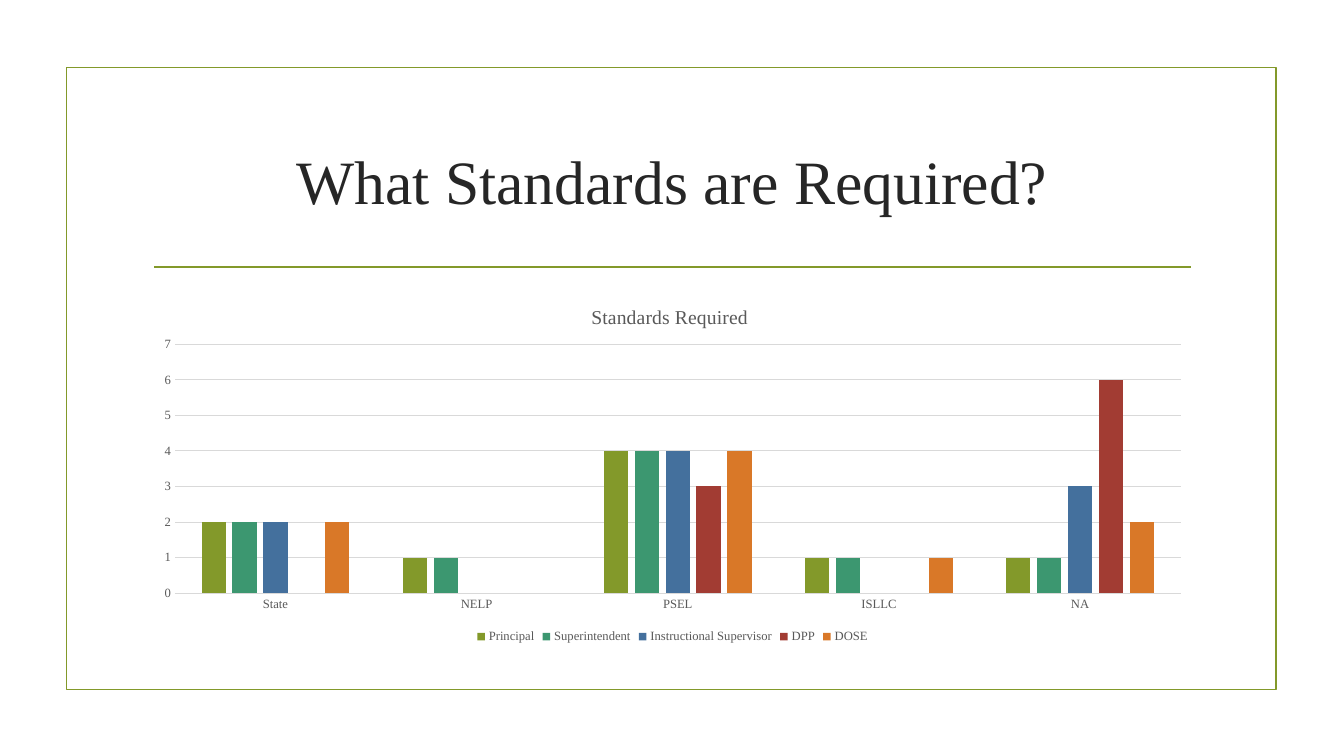
import pptx
import pptx.chart.data
import pptx.dml.color
import pptx.enum.chart
import pptx.enum.shapes
import pptx.enum.text
import pptx.oxml
import pptx.util
from pptx.util import Inches

RGBColor = pptx.dml.color.RGBColor
GREEN = RGBColor(0x83, 0x99, 0x2A)
TEAL = RGBColor(0x3C, 0x97, 0x70)
BLUE = RGBColor(0x44, 0x70, 0x9D)
RED = RGBColor(0xA2, 0x3C, 0x33)
ORANGE = RGBColor(0xD9, 0x78, 0x28)
WHITE = RGBColor(0xFF, 0xFF, 0xFF)
TITLE_INK = RGBColor(0x26, 0x26, 0x26)
CHART_INK = RGBColor(0x59, 0x59, 0x59)
GRID = RGBColor(0xD9, 0xD9, 0xD9)
FONT = "Times New Roman"

STANDARDS = ["State", "NELP", "PSEL", "ISLLC", "NA"]
ROLES = [
    ("Principal", GREEN, (2, 1, 4, 1, 1)),
    ("Superintendent", TEAL, (2, 1, 4, 1, 1)),
    ("Instructional Supervisor", BLUE, (2, None, 4, None, 3)),
    ("DPP", RED, (None, None, 3, None, 6)),
    ("DOSE", ORANGE, (2, None, 4, 1, 2)),
]


def format_font(font, size, color):
    font.name = FONT
    font.size = pptx.util.Pt(size)
    font.bold = False
    font.color.rgb = color


def format_line(line, color, width):
    line.color.rgb = color
    line.width = pptx.util.Pt(width)


def write_text(text_frame, text, size, color, align=pptx.enum.text.PP_ALIGN.CENTER):
    paragraph = text_frame.paragraphs[0]
    paragraph.alignment = align
    run = paragraph.add_run()
    run.text = text
    format_font(run.font, size, color)


def add_frame(slide, left, top, width, height):
    """Outline the page and rule off the heading, both in green."""
    frame = slide.shapes.add_shape(
        pptx.enum.shapes.MSO_SHAPE.RECTANGLE,
        Inches(left), Inches(top), Inches(width), Inches(height))
    frame.shadow.inherit = False
    frame.fill.background()
    format_line(frame.line, GREEN, 1.25)

    inset, drop = 0.87, 1.98
    rule = slide.shapes.add_connector(
        pptx.enum.shapes.MSO_CONNECTOR.STRAIGHT,
        Inches(left + inset), Inches(top + drop),
        Inches(left + width - inset + 0.02), Inches(top + drop))
    format_line(rule.line, GREEN, 1.25)
    rule._element.spPr.append(pptx.oxml.parse_xml(
        '<a:effectLst xmlns:a="http://schemas.openxmlformats.org/drawingml/2006/main"/>'))


def add_heading(slide, left, top, width, height):
    box = slide.shapes.add_textbox(
        Inches(left), Inches(top), Inches(width), Inches(height))
    box.text_frame.word_wrap = True
    box.text_frame.vertical_anchor = pptx.enum.text.MSO_ANCHOR.MIDDLE
    write_text(box.text_frame, "What Standards are Required?", 44, TITLE_INK)


def place_in_chart(element, target, **fractions):
    """Give the title or plot area a fixed place, in fractions of the chart."""
    layout = element.find(pptx.oxml.ns.qn("c:layout"))
    if layout is not None:
        element.remove(layout)
    inner = '<c:layoutTarget val="inner"/>' if target == "plot" else ""
    modes = '<c:xMode val="edge"/><c:yMode val="edge"/>'
    values = "".join(f'<c:{key} val="{value}"/>' for key, value in fractions.items())
    layout = pptx.oxml.parse_xml(
        '<c:layout xmlns:c="http://schemas.openxmlformats.org/drawingml/2006/chart">'
        f"<c:manualLayout>{inner}{modes}{values}</c:manualLayout></c:layout>")
    element.insert(1 if target == "title" else 0, layout)


def add_standards_chart(slide, left, top, width, height):
    data = pptx.chart.data.CategoryChartData()
    data.categories = STANDARDS
    for role, _, counts in ROLES:
        data.add_series(role, counts)
    chart = slide.shapes.add_chart(
        pptx.enum.chart.XL_CHART_TYPE.COLUMN_CLUSTERED,
        Inches(left), Inches(top), Inches(width), Inches(height), data).chart
    format_font(chart.font, 9, CHART_INK)

    chart.has_title = True
    write_text(chart.chart_title.text_frame, "Standards Required", 14, CHART_INK)
    chart.chart_title.include_in_layout = False
    place_in_chart(chart.chart_title._element, "title", x=0.42, y=0.05)

    chart.has_legend = True
    chart.legend.position = pptx.enum.chart.XL_LEGEND_POSITION.BOTTOM
    chart.legend.include_in_layout = False
    format_font(chart.legend.font, 9, CHART_INK)

    plot = chart.plots[0]
    plot.gap_width = 219
    plot.overlap = -27
    plot.vary_by_categories = False
    for series, (_, color, _) in zip(plot.series, ROLES):
        series.format.fill.solid()
        series.format.fill.fore_color.rgb = color
        series.invert_if_negative = False

    for axis in (chart.category_axis, chart.value_axis):
        axis.major_tick_mark = pptx.enum.chart.XL_TICK_MARK.NONE
        axis.minor_tick_mark = pptx.enum.chart.XL_TICK_MARK.NONE
        format_font(axis.tick_labels.font, 9, CHART_INK)
    format_line(chart.category_axis.format.line, GRID, 0.75)
    chart.value_axis.format.line.fill.background()
    chart.value_axis.minimum_scale = 0
    chart.value_axis.maximum_scale = 7
    chart.value_axis.major_unit = 1
    format_line(chart.value_axis.major_gridlines.format.line, GRID, 0.75)
    place_in_chart(plot._element.getparent(), "plot", x=0.03, y=0.17, w=0.95, h=0.68)


def main():
    presentation = pptx.Presentation()
    presentation.slide_width = Inches(13.33)
    presentation.slide_height = Inches(7.5)
    slide = presentation.slides.add_slide(presentation.slide_layouts[6])
    slide.background.fill.solid()
    slide.background.fill.fore_color.rgb = WHITE
    add_frame(slide, 0.66, 0.67, 12, 6.17)
    add_heading(slide, 1.42, 1.07, 10.5, 1.43)
    add_standards_chart(slide, 1.42, 2.8, 10.5, 3.63)
    presentation.save("out.pptx")


if __name__ == "__main__":
    main()
